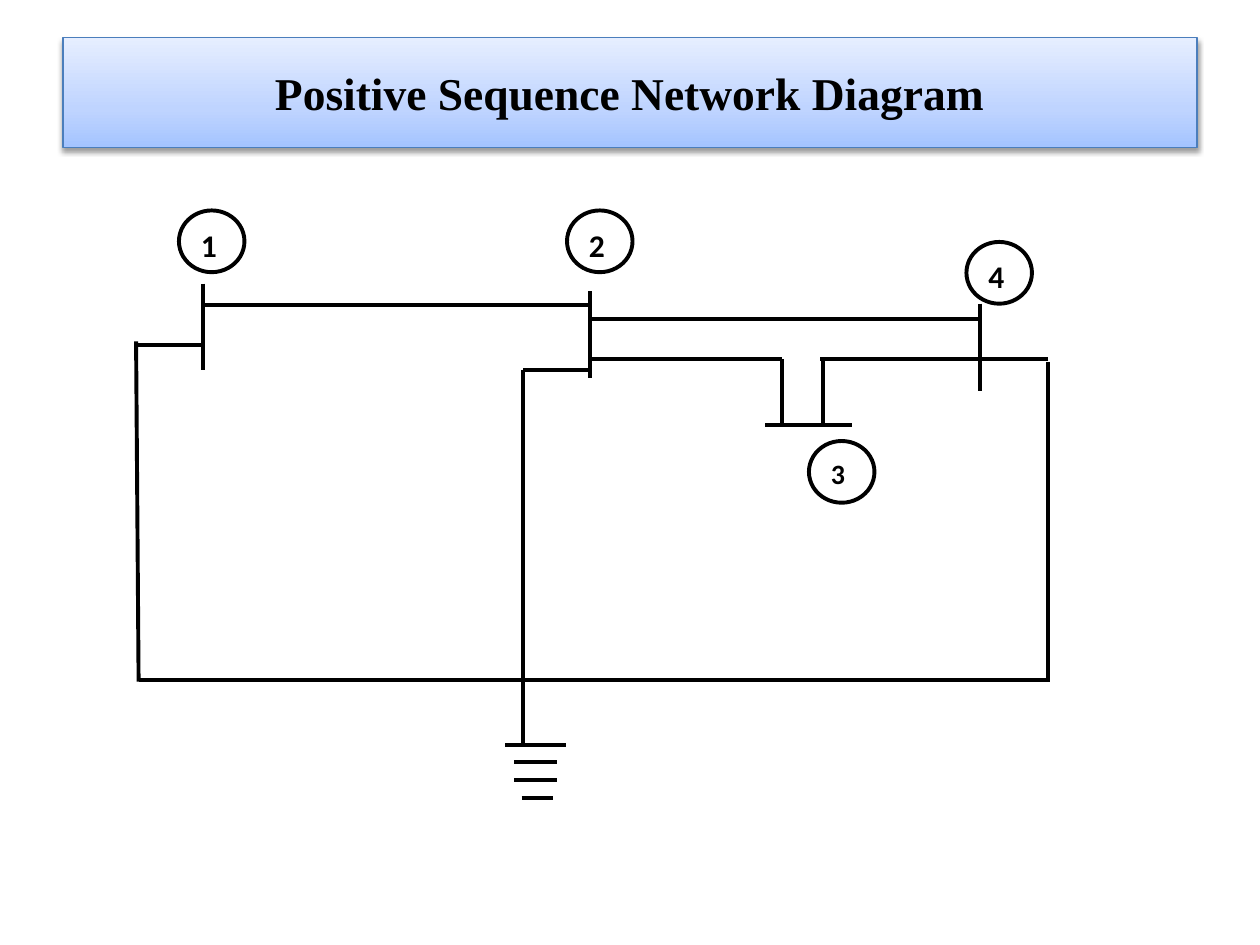
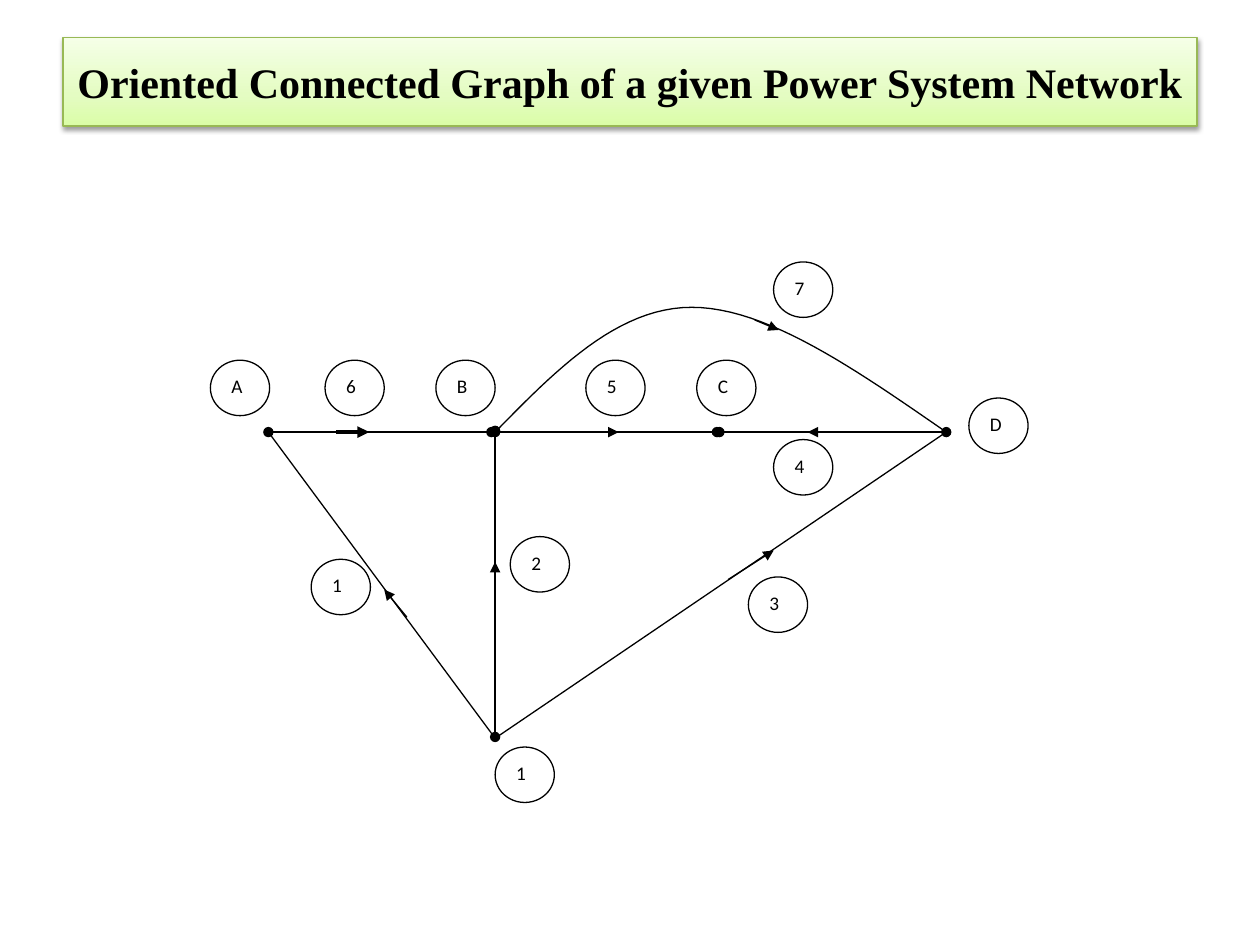
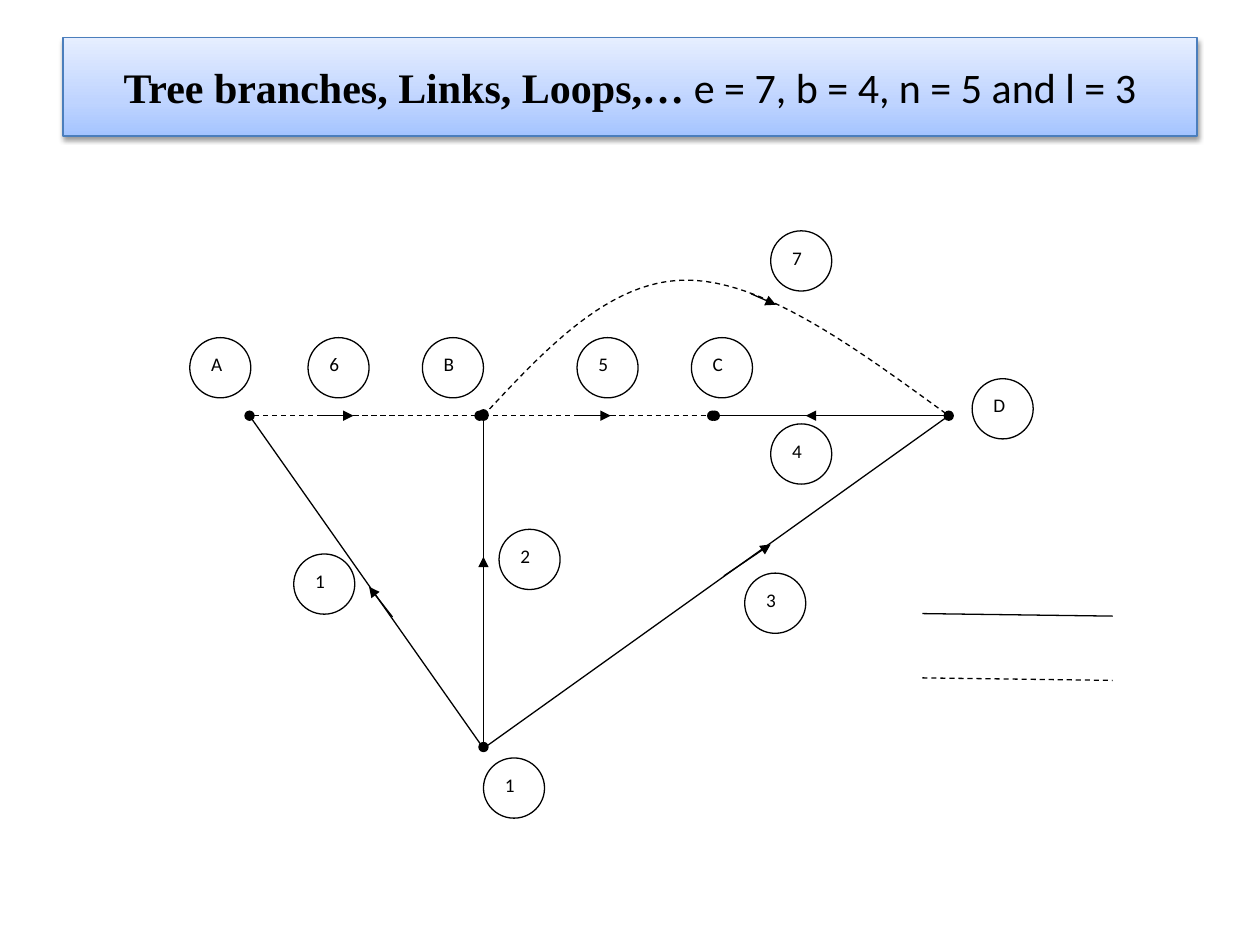
from collections import namedtuple
from lxml.etree import SubElement as Sub
from pptx import Presentation
from pptx.dml.color import RGBColor as Rgb
from pptx.enum.dml import MSO_LINE as Dash
from pptx.enum.shapes import MSO_CONNECTOR as Link, MSO_SHAPE as Kind
from pptx.enum.text import MSO_ANCHOR as Anchor, MSO_AUTO_SIZE as Fit, PP_ALIGN as Align
from pptx.oxml.ns import qn
from pptx.util import Cm, Pt

INK = {"black": "000000", "white": "FFFFFF"}
BANDS = {
    "blue": {"edge": "4B7EBC", "stops": [(0, "A4C4FF"), (35, "BFD4FF"), (100, "E6EEFF")]},
    "green": {"edge": "98B955", "stops": [(0, "DAFDA7"), (35, "E4FCC2"), (100, "F5FFE7")]},
}
SERIF, SANS = "Times New Roman", "Calibri"
THIN, THICK = 0.75, 2.25

TITLES = [
    ("blue", 2.21, 26, [("Positive Sequence Network Diagram", SERIF)]),
    ("green", 1.78, 24, [("Oriented Connected Graph of a given Power System Network", SERIF)]),
    ("blue", 1.98, 24, [("Tree branches, Links, Loops,…", SERIF),
                        (" e = 7, b = 4, n = 5 and l = 3", SANS)]),
]

Frame = namedtuple("Frame", "left top wide high")
PAGE = Frame(0, 0, 2.54, 2.54)
GRAPH = Frame(5.41, 8.71, 2.54, 2.54)
TREE = Frame(5.03, 8.38, 2.62, 2.76)

BUSES = [
    (1.61, 2.25, 1.61, 2.94), (4.68, 2.31, 4.68, 3),
    (6.76, 3.37, 6.07, 3.37), (7.78, 2.41, 7.78, 3.1),
]
WIRES = [
    (1.61, 2.42, 4.7, 2.42), (4.7, 2.53, 7.79, 2.53),
    (4.7, 2.85, 6.21, 2.85), (6.21, 3.37, 6.21, 2.85),
    (6.53, 3.37, 6.53, 2.85), (6.51, 2.85, 7.84, 2.85),
    (1.61, 2.74, 1.08, 2.74), (1.08, 2.71, 1.1, 5.41),
    (4.68, 2.94, 4.15, 2.94), (4.15, 2.94, 4.15, 5.45),
    (8.32, 2.85, 7.79, 2.85), (8.32, 2.87, 8.32, 5.38),
    (1.1, 5.4, 8.33, 5.4), (4.15, 5.4, 4.15, 5.91),
]
EARTH = [(4.01, 4.49), (4.08, 4.42), (4.08, 4.42), (4.14, 4.39)]
EARTH_TOP, EARTH_GAP = 5.91, 0.14
BUS_TAGS = [("1", 1.42, 1.67, 18), ("2", 4.5, 1.67, 18),
            ("4", 7.67, 1.92, 18), ("3", 6.42, 3.5, 16)]

EDGES = {
    "2": (1.8, -0.01, 1.8, 2.42),
    "6": (0, 0, 1.8, 0),
    "5": (1.77, 0, 3.56, 0),
    "4": (3.58, 0, 5.38, 0),
    "3": (1.8, 2.43, 5.38, 0),
    "1": (0, 0, 1.8, 2.43),
}
DOTTED = "2654"
ARC = [
    [(1.8, 0), (2.28, -0.49), (2.77, -0.99), (3.36, -0.99)],
    [(3.36, -0.99), (3.96, -0.99), (4.67, -0.49), (5.38, 0)],
]
ARROWS = {
    "3": (3.65, 1.17, 4.01, 0.94),
    "1": (1.1, 1.47, 0.92, 1.25),
    "2": (1.8, 1.28, 1.8, 1.03),
    "6": (0.54, 0, 0.8, 0),
    "5": (2.52, 0, 2.78, 0),
    "4": (4.55, 0, 4.28, 0),
    "7": (3.86, -0.89, 4.05, -0.81),
}
ROW = -0.57
TAGS = [
    ("A", -0.46, ROW), ("6", 0.45, ROW), ("B", 1.33, ROW), ("5", 2.52, ROW),
    ("C", 3.4, ROW), ("7", 4.01, -1.35), ("4", 4.01, 0.06), ("D", 5.56, -0.27),
    ("3", 3.81, 1.15), ("2", 1.92, 0.83), ("1", 0.34, 1.01), ("1", 1.8, 2.5),
]
LINKS = "567"
KEYS = [(7.32, 4.87, 8.83, 4.89, False), (7.32, 5.38, 8.83, 5.4, True)]


def rgb(code):
    return Rgb.from_string(code)


def place(frame, x, y):
    return Cm(frame.left + x * frame.wide), Cm(frame.top + y * frame.high)


def style(run, font, size, bold):
    run.font.name, run.font.size, run.font.bold = font, Pt(size), bold
    run.font.color.rgb = rgb(INK["black"])


def stroke(line, width, dash=False):
    line.color.rgb = rgb(INK["black"])
    line.width = Pt(width)
    if dash:
        line.dash_style = Dash.DASH


def draw(slide, frame, ends, width=THIN, dash=False, head=None, tail=None):
    start, stop = place(frame, *ends[:2]), place(frame, *ends[2:])
    wire = slide.shapes.add_connector(Link.STRAIGHT, *start, *stop)
    stroke(wire.line, width, dash)
    props = wire._element.spPr
    for name, mark in (("a:headEnd", head), ("a:tailEnd", tail)):
        if mark:
            Sub(props.find(qn("a:ln")), qn(name), type=mark)
    Sub(props, qn("a:effectLst"))


def tag(slide, frame, text, x, y, wide, high, size, width=THIN, bold=False):
    ring = slide.shapes.add_shape(Kind.OVAL, *place(frame, x, y),
                                  Cm(wide * frame.wide), Cm(high * frame.high))
    ring.shadow.inherit = False
    ring.fill.solid()
    ring.fill.fore_color.rgb = rgb(INK["white"])
    stroke(ring.line, width)
    ring.text_frame.text = text
    ring.text_frame.vertical_anchor = Anchor.TOP
    para = ring.text_frame.paragraphs[0]
    para.alignment, para.space_after = Align.LEFT, Pt(10)
    style(para.runs[0], SANS, size, bold)


def curve(slide, frame, dash, steps=24):
    spots = []
    for a, b, c, d in ARC:
        for i in range(steps + 1):
            t = i / steps
            u = 1 - t
            spots.append(place(frame, *(
                u**3 * p + 3 * u * u * t * q + 3 * u * t * t * r + t**3 * s
                for p, q, r, s in zip(a, b, c, d))))
    pen = slide.shapes.build_freeform(*spots[0])
    pen.add_line_segments(spots[1:], close=False)
    arc = pen.convert_to_shape()
    arc.shadow.inherit = False
    arc.fill.background()
    stroke(arc.line, THIN, dash)


def band(shape, edge, stops):
    props = shape._element.spPr
    grad = Sub(props, qn("a:gradFill"), rotWithShape="1")
    group = Sub(grad, qn("a:gsLst"))
    for spot, code in stops:
        stop = Sub(group, qn("a:gs"), pos=str(spot * 1000))
        Sub(stop, qn("a:srgbClr"), val=code)
    Sub(grad, qn("a:lin"), ang="16200000", scaled="0")
    shape.line.color.rgb = rgb(edge)
    shape.line.width = Pt(THIN)
    cast = Sub(Sub(props, qn("a:effectLst")), qn("a:outerShdw"),
               blurRad=str(Pt(3.1)), dist=str(Pt(1.6)), dir="5400000", rotWithShape="0")
    Sub(Sub(cast, qn("a:srgbClr"), val=INK["black"]), qn("a:alpha"), val="38000")


def start(deck, hue, high, size, parts):
    slide = deck.slides.add_slide(deck.slide_layouts[5])
    title = slide.shapes.title
    title.left, title.top, title.width, title.height = Cm(1.27), Cm(0.76), Cm(22.86), Cm(high)
    band(title, **BANDS[hue])
    frame = title.text_frame
    frame.auto_size, frame.word_wrap = Fit.NONE, True
    frame.vertical_anchor = Anchor.MIDDLE
    para = frame.paragraphs[0]
    para.alignment = Align.CENTER
    for text, font in parts:
        run = para.add_run()
        run.text = text
        style(run, font, size, font == SERIF)
    return slide


def network(slide):
    bars = [(a, EARTH_TOP + i * EARTH_GAP, b, EARTH_TOP + i * EARTH_GAP)
            for i, (a, b) in enumerate(EARTH)]
    for ends in BUSES + WIRES + bars:
        draw(slide, PAGE, ends, THICK)
    for text, x, y, size in BUS_TAGS:
        tag(slide, PAGE, text, x, y, 0.52, 0.49, size, THICK, True)


def graph(slide, frame, dashed="", heavy=""):
    for name, ends in EDGES.items():
        dot = "oval" if name in DOTTED else None
        draw(slide, frame, ends, dash=name in dashed, head=dot, tail=dot)
    curve(slide, frame, "7" in dashed)
    for name, ends in ARROWS.items():
        draw(slide, frame, ends, THICK if name in heavy else THIN, tail="triangle")
    for text, x, y in TAGS:
        tag(slide, frame, text, x, y, 0.47, 0.44, 11)


def main():
    deck = Presentation()
    deck.slide_width, deck.slide_height = Cm(25.4), Cm(19.05)
    first, second, third = [start(deck, *item) for item in TITLES]
    network(first)
    graph(second, GRAPH, heavy="6")
    graph(third, TREE, dashed=LINKS)
    for *ends, dash in KEYS:
        draw(third, PAGE, ends, dash=dash)
    deck.save("out.pptx")


if __name__ == "__main__":
    main()
